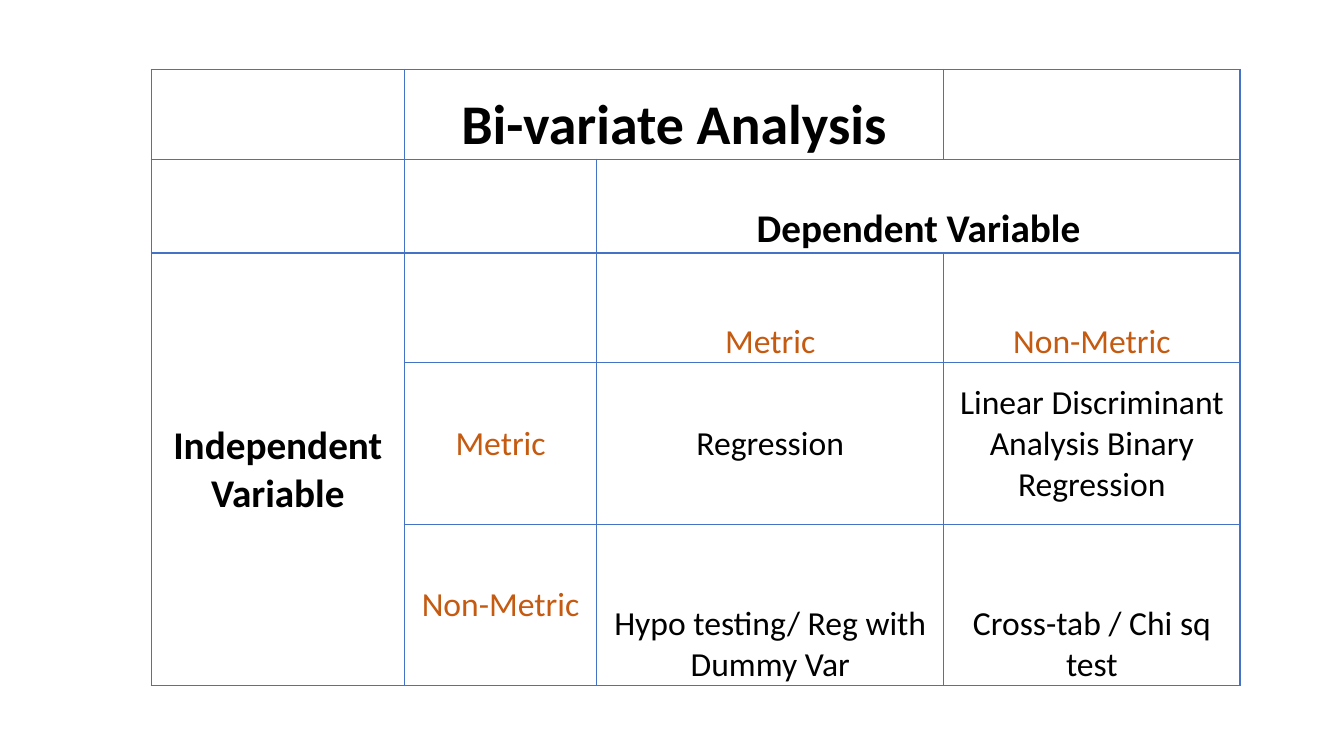
from lxml.etree import SubElement
from pptx import Presentation
from pptx.dml.color import RGBColor
from pptx.enum.text import MSO_ANCHOR as Anchor, PP_ALIGN as Align
from pptx.oxml.ns import qn
from pptx.util import Inches, Pt

BLACK = RGBColor(0x00, 0x00, 0x00)
ORANGE = RGBColor(0xC5, 0x5A, 0x11)
BLUE = RGBColor(0x44, 0x72, 0xC4)

COLUMN_WIDTHS = [2.51, 1.91, 3.44, 2.94]
ROW_HEIGHTS = [0.89, 0.93, 1.09, 1.6, 1.6]
MERGES = [((0, 1), (0, 2)), ((1, 2), (1, 3)), ((2, 0), (4, 0))]
HEADINGS = [
    (0, 1, "Bi-variate Analysis", Anchor.BOTTOM, 40),
    (1, 2, "Dependent Variable", Anchor.BOTTOM, 28),
    (2, 0, "Independent Variable", Anchor.MIDDLE, 28),
]
SCALES = [
    (2, 2, "Metric", Anchor.BOTTOM),
    (2, 3, "Non-Metric", Anchor.BOTTOM),
    (3, 1, "Metric", Anchor.MIDDLE),
    (4, 1, "Non-Metric", Anchor.MIDDLE),
]
METHODS = [
    (3, 2, "Regression", Anchor.MIDDLE),
    (3, 3, "Linear Discriminant Analysis Binary Regression", Anchor.MIDDLE),
    (4, 2, "Hypo testing/ Reg with Dummy Var", Anchor.BOTTOM),
    (4, 3, "Cross-tab / Chi sq test", Anchor.BOTTOM),
]


class MatrixSlide:
    """Holds the slide and the style of its analysis matrix."""

    font_name = "Calibri"
    border_color = BLUE
    border_width = Pt(1)

    def __init__(self, slide):
        self.slide = slide

    def add_matrix(self, left, top, widths, heights, merges):
        frame = self.slide.shapes.add_table(
            len(heights), len(widths), Inches(left), Inches(top),
            Inches(sum(widths)), Inches(sum(heights)))
        self.matrix = frame.table
        self.matrix.first_row = self.matrix.horz_banding = False
        for column, width in zip(self.matrix.columns, widths):
            column.width = Inches(width)
        for row, height in zip(self.matrix.rows, heights):
            row.height = Inches(height)
            for cell in row.cells:
                self.draw_borders(cell)
                cell.fill.background()
        for first, last in merges:
            self.matrix.cell(*first).merge(self.matrix.cell(*last))

    def draw_borders(self, cell):
        properties = cell._tc.get_or_add_tcPr()
        for side in ("a:lnL", "a:lnR", "a:lnT", "a:lnB"):
            border = SubElement(properties, qn(side), w=str(self.border_width))
            fill = SubElement(border, qn("a:solidFill"))
            SubElement(fill, qn("a:srgbClr"), val=str(self.border_color))

    def set_entry(self, row, column, text, anchor, size=24, color=BLACK, bold=False):
        cell = self.matrix.cell(row, column)
        cell.margin_left = cell.margin_right = cell.margin_top = Inches(0.01)
        cell.margin_bottom = 0
        cell.vertical_anchor = anchor
        cell.text_frame.text = text
        paragraph = cell.text_frame.paragraphs[0]
        paragraph.alignment = Align.CENTER
        font = paragraph.runs[0].font
        font.name, font.size, font.bold = self.font_name, Pt(size), bold
        font.color.rgb = color


def main():
    deck = Presentation()
    deck.slide_width, deck.slide_height = Inches(13.33), Inches(7.5)
    analysis = MatrixSlide(deck.slides.add_slide(deck.slide_layouts[6]))
    analysis.add_matrix(1.5, 0.69, COLUMN_WIDTHS, ROW_HEIGHTS, MERGES)
    for heading in HEADINGS:
        analysis.set_entry(*heading, bold=True)
    for scale in SCALES:
        analysis.set_entry(*scale, color=ORANGE)
    for method in METHODS:
        analysis.set_entry(*method)
    deck.save("out.pptx")


if __name__ == "__main__":
    main()
